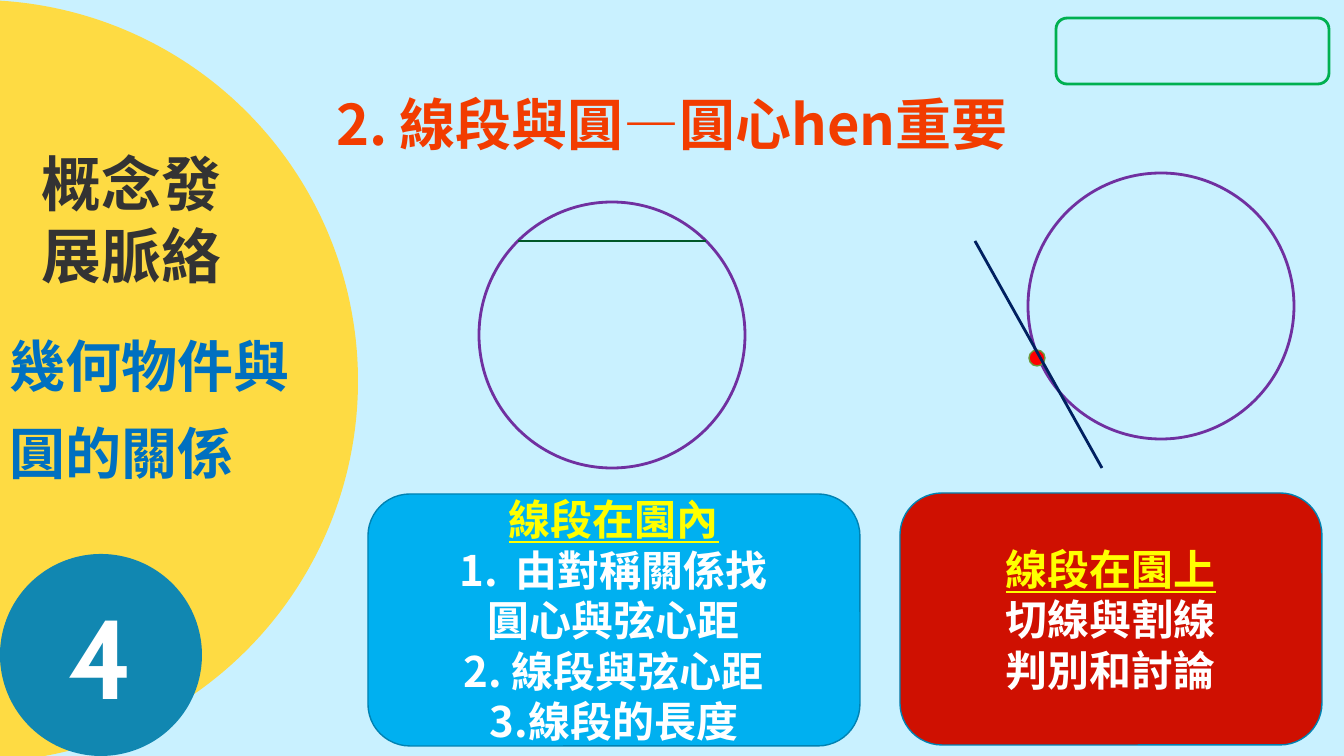
import pptx
import pptx.util
import pptx.dml.color
import pptx.enum.shapes
import pptx.enum.text
import pptx.oxml.ns
import lxml.etree

KIND = pptx.enum.shapes.MSO_SHAPE
ALIGN = pptx.enum.text.PP_ALIGN
ANCHOR = pptx.enum.text.MSO_ANCHOR
PX = 914400 / 100.8

HEX = {
    "sky": "C9F1FF", "sun": "FEDB43", "ink": "333333", "blue": "0070C0",
    "teal": "1187B1", "white": "FFFFFF", "green": "00B050", "navy": "002060",
    "red": "FF0000", "flame": "F23C00", "plum": "7030A0", "moss": "6C9A3B",
    "cyan": "00B0F0", "brick": "CF1001", "edge": "0082B2",
    "yellow": "FFFF00", "chord": "005828",
}
CJK = "Noto Sans CJK SC"
HEAD = {"font": CJK, "size": 30, "color": "yellow", "bold": True, "underline": True}
ITEM = {"font": CJK, "size": 30, "color": "white", "bold": True}
HANG = {"marL": 56, "indent": -56}

# Text is a list of paragraphs: (words, format, layout).
TITLE = [("2. 線段與圓—圓心hen重要",
          {"font": CJK, "size": 40, "color": "flame", "bold": True}, {})]
TOPIC = [("概念發展脈絡",
          {"font": "Cabin", "size": 42.7, "color": "ink", "bold": True}, {})]
THEME = [("幾何物件與圓的關係",
          {"font": CJK, "size": 40, "color": "blue", "bold": True},
          {"line_spacing": 1.3})]
NUMBER = [("4", {"font": "Cabin", "size": 80, "color": "white", "bold": True}, {})]
INSIDE = [("線段在園內", HEAD, {}),
          ("由對稱關係找", ITEM, {**HANG, "number": True})]
INSIDE += [(words, ITEM, HANG)
           for words in ["圓心與弦心距", "2. 線段與弦心距", "3.線段的長度"]]
ON = [("線段在園上", HEAD, {})]
ON += [(words, ITEM, {}) for words in ["切線與割線", "判別和討論"]]

# kind, box in px, fill, line, line width in pt, text
SHAPES = [
    (KIND.OVAL, (-404, 0, 762, 762), "sun", None, 0, None),
    (None, (32, 142, 205, 155), None, None, 0, TOPIC),
    (None, (0, 306, 326, 186), None, None, 0, THEME),
    (KIND.OVAL, (0, 554, 202, 202), "teal", None, 0, NUMBER),
    (KIND.ROUNDED_RECTANGLE, (1056, 18, 273, 66), None, "green", 2, None),
    (KIND.OVAL, (479, 202, 266, 266), None, "plum", 2, None),
    (KIND.OVAL, (1028, 173, 266, 266), None, "plum", 2, None),
    (KIND.OVAL, (1029, 350, 16, 16), "red", "moss", 1, None),
    (KIND.ROUNDED_RECTANGLE, (368, 494, 492, 252), "cyan", "edge", 1, INSIDE),
    (KIND.ROUNDED_RECTANGLE, (900, 493, 422, 252), "brick", "edge", 1, ON),
]
# ends in px, colour, width in pt
LINES = [((518, 241, 706, 241), "chord", 1.5), ((975, 241, 1102, 468), "navy", 2)]


def px(*nums):
    return [round(n * PX) for n in nums]


def rgb(name):
    return pptx.dml.color.RGBColor.from_string(HEX[name])


def add(node, tag, **attrs):
    return lxml.etree.SubElement(node, pptx.oxml.ns.qn(tag), attrs)


def style(run, form):
    font = run.font
    for key in ("bold", "underline"):
        setattr(font, key, form.get(key, False))
    font.size = pptx.util.Pt(form["size"])
    font.color.rgb = rgb(form["color"])
    font.name = form["font"]
    add(run._r.get_or_add_rPr(), "a:ea", typeface=form["font"])


def write(frame, paras, align, anchor):
    frame.word_wrap = True
    frame.auto_size = pptx.enum.text.MSO_AUTO_SIZE.NONE
    frame.vertical_anchor = anchor
    for i, (words, form, lay) in enumerate(paras):
        para = frame.add_paragraph() if i else frame.paragraphs[0]
        para.alignment = align
        if "line_spacing" in lay:
            para.line_spacing = lay["line_spacing"]
        props = para._p.get_or_add_pPr()
        for key in ("marL", "indent"):
            if key in lay:
                props.set(key, str(px(lay[key])[0]))
        if lay.get("number"):
            add(props, "a:buFont", typeface="+mj-lt")
            add(props, "a:buAutoNum", type="arabicPeriod")
        run = para.add_run()
        run.text = words
        style(run, form)


def draw(slide, kind, box, fill, line, width, text):
    if kind is None:
        label = slide.shapes.add_textbox(*px(*box))
        write(label.text_frame, text, ALIGN.LEFT, ANCHOR.TOP)
        return
    shape = slide.shapes.add_shape(kind, *px(*box))
    shape.shadow.inherit = False
    for part, color in ((shape.fill, fill), (shape.line.fill, line)):
        if color:
            part.solid()
            part.fore_color.rgb = rgb(color)
        else:
            part.background()
    if line:
        shape.line.width = pptx.util.Pt(width)
    if text:
        write(shape.text_frame, text, ALIGN.CENTER, ANCHOR.MIDDLE)


def main():
    deck = pptx.Presentation()
    deck.slide_width, deck.slide_height = px(1344, 756)
    slide = deck.slides.add_slide(deck.slide_layouts[5])
    slide.background.fill.solid()
    slide.background.fill.fore_color.rgb = rgb("sky")

    title = slide.shapes.title
    title.left, title.top, title.width, title.height = px(326, 84, 730, 78)
    write(title.text_frame, TITLE, ALIGN.LEFT, ANCHOR.TOP)

    for item in SHAPES:
        draw(slide, *item)
    for ends, color, width in LINES:
        line = slide.shapes.add_connector(
            pptx.enum.shapes.MSO_CONNECTOR.STRAIGHT, *px(*ends))
        line.line.color.rgb = rgb(color)
        line.line.width = pptx.util.Pt(width)
        add(line._element.spPr, "a:effectLst")
    deck.save("out.pptx")


if __name__ == "__main__":
    main()
